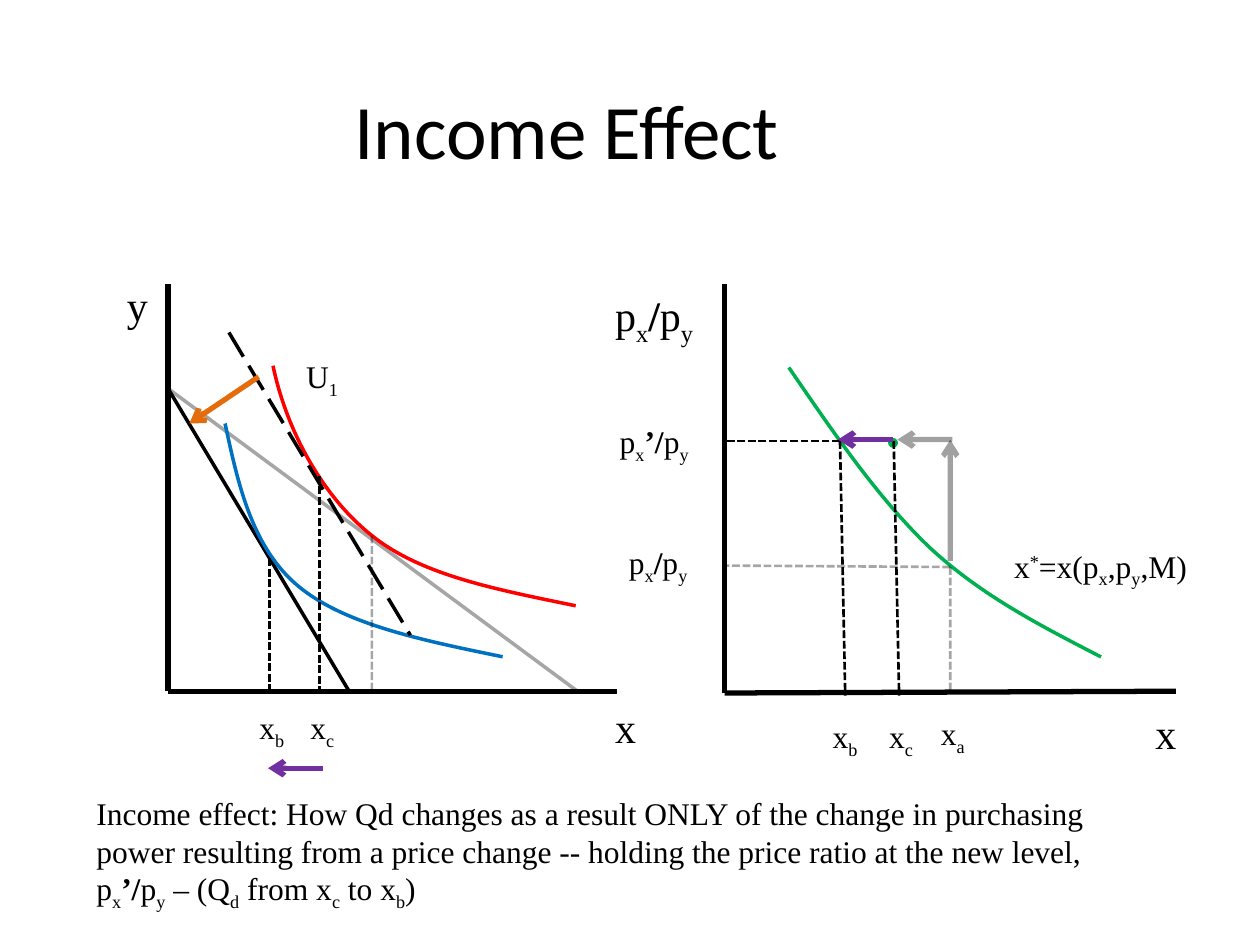
"""Build the income effect slide with its two economics diagrams."""
from lxml.etree import SubElement
from pptx import Presentation
from pptx.dml.color import RGBColor
from pptx.enum.dml import MSO_LINE
from pptx.enum.shapes import MSO_CONNECTOR, MSO_SHAPE
from pptx.enum.text import MSO_ANCHOR, MSO_AUTO_SIZE, PP_ALIGN
from pptx.oxml.ns import qn
from pptx.util import Pt

BLACK, BLUE, RED, GREEN = "000000", "0070C0", "FF0000", "00B050"
PURPLE, ORANGE = "7030A0", "E46C0A"
BASELINES = {"sub": "-25000", "sup": "30000"}

AXIS = {"width": 3}
BUDGET = {"width": 2}
OLD_BUDGET = {"width": 2, "opacity": 35}
COMPENSATED = {"width": 2, "dash": MSO_LINE.LONG_DASH}
GUIDE = {"width": 1.5, "dash": MSO_LINE.SQUARE_DOT}
OLD_GUIDE = {**GUIDE, "opacity": 35}
OLD_ARROW = {"width": 3, "opacity": 37, "arrow": True}
INCOME_ARROW = {"width": 3, "color": PURPLE, "arrow": True}
SHIFT_ARROW = {"width": 3, "color": ORANGE, "arrow": True}

AXES_AND_BUDGETS = [
    ((96, 162), (96, 395), AXIS),
    ((352.3, 395), (96, 395), AXIS),
    ((414, 162), (414, 396), AXIS),
    ((672, 395), (414, 396), AXIS),
    ((96, 222), (330, 395), OLD_BUDGET),
    ((96, 222), (199.5, 395), BUDGET),
]
CURVES = [
    (BLUE, [(128.6, 242), (136.1, 277), (144, 313), (170.5, 335),
            (197, 357), (242, 366), (287.2, 375.3)]),
    (RED, [(156, 209), (163.5, 245), (183.5, 283), (212.4, 306),
           (241, 329), (284.5, 337), (329, 346.2)]),
    (GREEN, [(450.8, 210), (476.6, 247.7), (502, 285), (531.4, 313),
             (561, 340.5), (595.5, 358), (629.2, 375.4)]),
]
GUIDES_AND_ARROWS = [
    ((212.5, 306), (212.5, 394), OLD_GUIDE),
    ((154, 319), (154, 394), GUIDE),
    ((182.7, 272), (182.7, 394), GUIDE),
    ((543, 324), (543, 396), OLD_GUIDE),
    ((543, 324), (414, 323.2), OLD_GUIDE),
    ((480, 252), (414, 252), GUIDE),
    ((480, 252), (483, 397.5), GUIDE),
    ((510.7, 252), (513.8, 397.5), GUIDE),
    ((130.8, 190), (234.5, 363), COMPENSATED),
    ((543, 320.5), (543, 251.3), OLD_ARROW),
    ((544.3, 251.2), (512.8, 251.2), OLD_ARROW),
    ((510.5, 251.2), (478.8, 251.2), INCOME_ARROW),
    ((184.7, 439), (153.2, 439), INCOME_ARROW),
    ((147.8, 215.3), (108.2, 242), SHIFT_ARROW),
]


def quantity(letter):
    return [("x", ""), (letter, "sub")]


def price_ratio(slash):
    return [("p", ""), ("x", "sub"), (slash, "bold"), ("p", ""), ("y", "sub")]


DEMAND = [("x", ""), ("*", "sup"), ("=x(p", ""), ("x", "sub"),
          (",p", ""), ("y", "sub"), (",M)", "")]
EXPLANATION = [
    ("Income effect: How Qd changes as a result ONLY of the change in purchasing "
     "power resulting from a price change -- holding the price ratio at the new level, p", ""),
    *price_ratio("’/")[1:], (" – (Q", ""), ("d", "sub"), (" from x", ""),
    ("c", "sub"), (" to x", ""), ("b", "sub"), (")", "")]
LABELS = [
    ((65.5, 156.2, 26.6, 36), 24, False, [("y", "")]),
    ((141.1, 401, 29.5, 29), 18, False, quantity("b")),
    ((468.7, 406, 29.5, 29), 18, False, quantity("b")),
    ((530.6, 404.6, 29, 29), 18, False, quantity("a")),
    ((572.4, 308.8, 116, 29), 18, False, DEMAND),
    ((167.8, 200.7, 34, 29), 18, False, [("U", ""), ("1", "sub")]),
    ((344.4, 397.5, 21.6, 36), 24, True, [("x", "")]),
    ((653.2, 401, 27.4, 36), 24, True, [("x", "")]),
    ((344.4, 162, 70, 36), 24, True, price_ratio("/")),
    ((352.3, 306.7, 54.7, 29), 18, True, price_ratio("/")),
    ((347, 237.6, 60, 29), 18, True, price_ratio("’/")),
    ((48, 450, 605.5, 72.7), 18, True, EXPLANATION),
    ((501, 406, 29, 29), 18, False, quantity("c")),
    ((170.3, 401, 29, 29), 18, False, quantity("c")),
]


def rgb(value):
    return RGBColor.from_string(value)


def style_text(span, **formats):
    span.font.color.rgb = rgb(BLACK)
    for name, value in formats.items():
        setattr(span.font, name, value)


def add_line(page, start, end, width, color=BLACK, dash=None, opacity=None, arrow=False):
    connector = page.shapes.add_connector(
        MSO_CONNECTOR.STRAIGHT, *(Pt(value) for value in start + end))
    line = connector.line
    line.color.rgb = rgb(color)
    line.width = Pt(width)
    if dash is not None:
        line.dash_style = dash
    properties = connector._element.spPr
    outline = properties.find(qn("a:ln"))
    if opacity:
        fill = outline.find(qn("a:solidFill"))
        SubElement(fill[0], qn("a:alpha"), val=str(opacity * 1000))
    if arrow:
        SubElement(outline, qn("a:tailEnd"), type="arrow")
    SubElement(properties, qn("a:effectLst"))


def bend_segments(curve):
    segments = list(curve._element.iter(qn("a:lnTo")))
    route = segments[0].getparent()
    for first in range(0, len(segments), 3):
        bend = SubElement(route, qn("a:cubicBezTo"))
        for segment in segments[first:first + 3]:
            bend.append(segment[0])
            route.remove(segment)


def add_curve(page, color, points):
    start, *others = [(Pt(x), Pt(y)) for x, y in points]
    builder = page.shapes.build_freeform(*start)
    builder.add_line_segments(others, close=False)
    curve = builder.convert_to_shape()
    bend_segments(curve)
    curve.fill.background()
    curve.line.color.rgb = rgb(color)
    curve.line.width = Pt(2)
    curve.shadow.inherit = False


def add_label(page, place, size, wrap, spans):
    box = page.shapes.add_textbox(*(Pt(value) for value in place))
    box.text_frame.word_wrap = wrap
    box.text_frame.auto_size = MSO_AUTO_SIZE.SHAPE_TO_FIT_TEXT
    para = box.text_frame.paragraphs[0]
    for text, kind in spans:
        span = para.add_run()
        span.text = text
        style_text(span, name="Times New Roman", size=Pt(size), bold=kind == "bold")
        if kind in BASELINES:
            span._r.get_or_add_rPr().set("baseline", BASELINES[kind])


def add_title(page):
    title = page.shapes.title
    place = {"left": 36, "top": 21.6, "width": 576, "height": 103.7}
    for name, value in place.items():
        setattr(title, name, Pt(value))
    title.text_frame.text = "Income Effect"
    title.text_frame.vertical_anchor = MSO_ANCHOR.MIDDLE
    para = title.text_frame.paragraphs[0]
    para.alignment = PP_ALIGN.CENTER
    style_text(para.runs[0], name="Calibri", size=Pt(44))


def add_dot(page):
    dot = page.shapes.add_shape(MSO_SHAPE.OVAL, Pt(508.5), Pt(251.3), Pt(3.6), Pt(3.6))
    dot.fill.solid()
    dot.fill.fore_color.rgb = dot.line.color.rgb = rgb(GREEN)
    dot.line.width = Pt(2)
    dot.shadow.inherit = False


def main():
    deck = Presentation()
    deck.slide_width, deck.slide_height = Pt(720), Pt(540)
    page = deck.slides.add_slide(deck.slide_layouts[5])
    add_title(page)
    for start, end, style in AXES_AND_BUDGETS:
        add_line(page, start, end, **style)
    for color, points in CURVES:
        add_curve(page, color, points)
    add_dot(page)
    for start, end, style in GUIDES_AND_ARROWS:
        add_line(page, start, end, **style)
    for label in LABELS:
        add_label(page, *label)
    deck.save("out.pptx")


if __name__ == "__main__":
    main()
